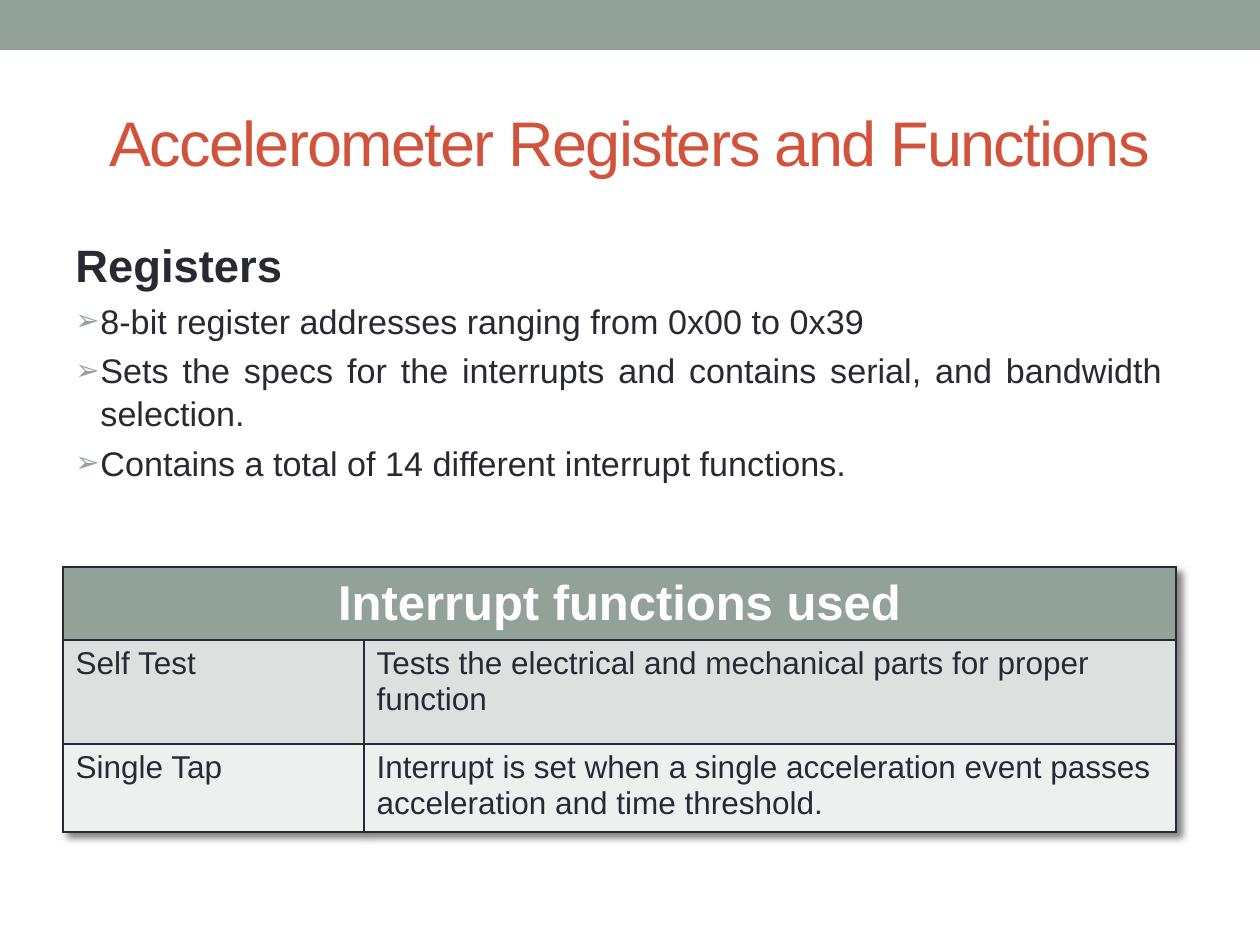
import pptx
import pptx.util
import pptx.dml.color
import pptx.enum.shapes
import pptx.enum.text
import pptx.oxml
import pptx.oxml.ns

SCALE = 914400 / 126  # EMU per px
SAGE, INK, RED, WHITE = "93A299", "292934", "D2533C", "FFFFFF"
ALIGN = pptx.enum.text.PP_ALIGN
ANCHOR = pptx.enum.text.MSO_ANCHOR
NAMESPACE = pptx.oxml.ns.nsdecls("a")


def px(*lengths):
    return [pptx.util.Emu(round(length * SCALE)) for length in lengths]


def style(paragraph, size, color, bold=False, align=ALIGN.LEFT):
    paragraph.font.name = "Arial"
    paragraph.font.size = pptx.util.Pt(size)
    paragraph.font.bold = bold
    paragraph.font.color.rgb = pptx.dml.color.RGBColor.from_string(color)
    paragraph.alignment = align


presentation = pptx.Presentation()
presentation.slide_width, presentation.slide_height = px(1260, 945)
slide = presentation.slides.add_slide(presentation.slide_layouts[5])

# Top band
band = slide.shapes.add_shape(
    pptx.enum.shapes.MSO_SHAPE.RECTANGLE, *px(0, 0, 1260, 50))
band.shadow.inherit = False
band.fill.solid()
band.fill.fore_color.rgb = pptx.dml.color.RGBColor.from_string(SAGE)
band.line.fill.background()

# Title
title = slide.shapes.title
title.left, title.top, title.width, title.height = px(63, 73, 1134, 136)
title.text_frame.text = "Accelerometer Registers and Functions"
title.text_frame.vertical_anchor = ANCHOR.MIDDLE
paragraph = title.text_frame.paragraphs[0]
style(paragraph, 36, RED, align=ALIGN.CENTER)
paragraph.runs[0].font._element.set("spc", "-100")

# Heading and bullet list
body = slide.shapes.add_textbox(*px(63, 231, 1113, 305))
body.text_frame.word_wrap = True
body.text_frame.text = "\n".join([
    "Registers",
    "8-bit register addresses ranging from 0x00 to 0x39",
    "Sets the specs for the interrupts and contains serial, and bandwidth selection.",
    "Contains a total of 14 different interrupt functions.",
])
heading, *bullets = body.text_frame.paragraphs
style(heading, 25.9, INK, bold=True)
heading.space_before = pptx.util.Pt(4)
indent, = px(25)
for paragraph in bullets:
    style(paragraph, 19.5, INK, align=ALIGN.JUSTIFY)
    paragraph.space_before = pptx.util.Pt(4)
    paragraph.line_spacing = 1.04
    properties = paragraph._p.get_or_add_pPr()
    properties.set("marL", str(indent))
    properties.set("indent", str(-indent))
    bullet_parts = [
        f'<a:buClr {NAMESPACE}><a:srgbClr val="{SAGE}"/></a:buClr>',
        f'<a:buSzPct {NAMESPACE} val="85000"/>',
        f'<a:buFont {NAMESPACE} typeface="Arial"/>',
        f'<a:buChar {NAMESPACE} char="➢"/>',
    ]
    default_font = properties.find(pptx.oxml.ns.qn("a:defRPr"))
    for part in bullet_parts:
        default_font.addprevious(pptx.oxml.parse_xml(part))

# Table of interrupt functions
rows = [
    (73, SAGE, ["Interrupt functions used", ""]),
    (104, "DCE0DE", ["Self Test",
                     "Tests the electrical and mechanical parts for proper function"]),
    (84, "EEF0EF", ["Single Tap",
                    "Interrupt is set when a single acceleration event passes "
                    "acceleration and time threshold."]),
]
table = slide.shapes.add_table(3, 2, *px(63, 567, 1113, 261)).table
table.columns[0].width, table.columns[1].width = px(301, 812)
table.cell(0, 0).merge(table.cell(0, 1))
for row_index, (height, fill, texts) in enumerate(rows):
    table.rows[row_index].height, = px(height)
    for column_index, text in enumerate(texts):
        cell = table.cell(row_index, column_index)
        cell.fill.solid()
        cell.fill.fore_color.rgb = pptx.dml.color.RGBColor.from_string(fill)
        cell.text = text
        if row_index == 0:
            cell.vertical_anchor = ANCHOR.MIDDLE
            style(cell.text_frame.paragraphs[0], 28, WHITE, True, ALIGN.CENTER)
        else:
            style(cell.text_frame.paragraphs[0], 18, INK)
        # Borders come before the fill in the cell properties
        for position, side in enumerate(["lnL", "lnR", "lnT", "lnB"]):
            cell._tc.get_or_add_tcPr().insert(position, pptx.oxml.parse_xml(
                f'<a:{side} {NAMESPACE} w="12700"><a:solidFill>'
                f'<a:srgbClr val="{INK}"/></a:solidFill></a:{side}>'))

# Soft shadow under the table
table._tbl.tblPr.insert(0, pptx.oxml.parse_xml(
    f'<a:effectLst {NAMESPACE}><a:outerShdw blurRad="50800" dist="50800" dir="2700000">'
    '<a:srgbClr val="000000"><a:alpha val="50000"/></a:srgbClr>'
    '</a:outerShdw></a:effectLst>'))

presentation.save("out.pptx")
